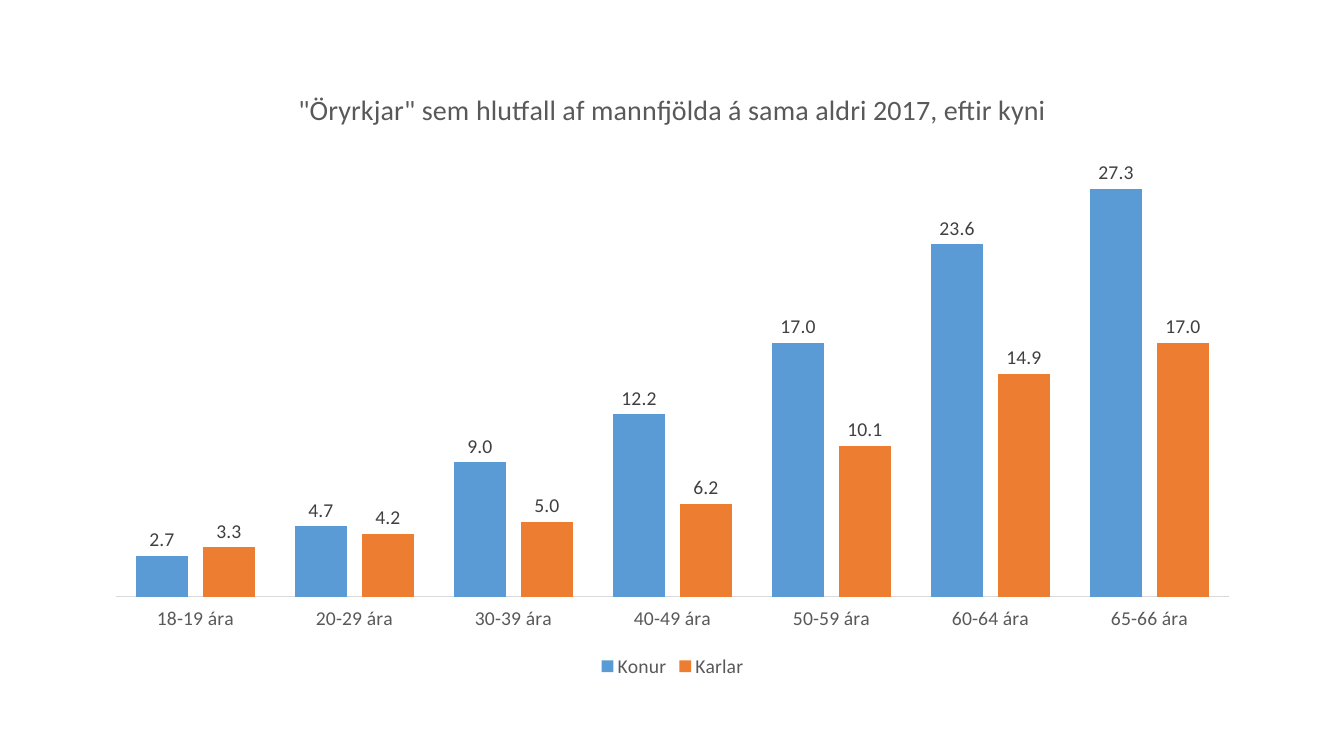
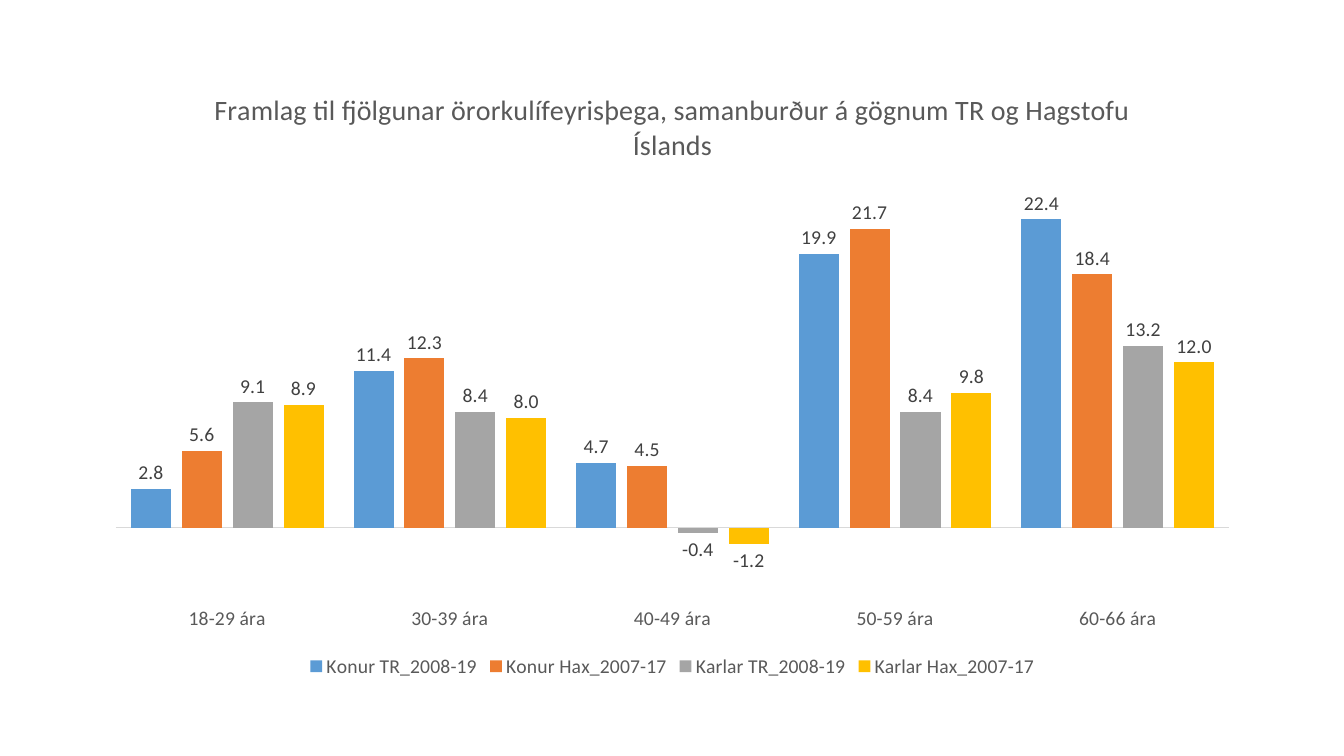
"""Build two slides, each with a clustered column chart on disability pensioners."""
from pptx import Presentation
from pptx.chart.data import CategoryChartData
from pptx.dml.color import RGBColor
from pptx.enum.chart import XL_CHART_TYPE, XL_LABEL_POSITION, XL_LEGEND_POSITION, XL_TICK_LABEL_POSITION, XL_TICK_MARK
from pptx.util import Inches, Pt

CLUSTERED = XL_CHART_TYPE.COLUMN_CLUSTERED
OUTSIDE_END = XL_LABEL_POSITION.OUTSIDE_END
BOTTOM = XL_LEGEND_POSITION.BOTTOM
LOW = XL_TICK_LABEL_POSITION.LOW
NO_TICK = XL_TICK_MARK.NONE

FONT = "Calibri"
NUMBER_FORMAT = "0.0"
COLORS = {"text": "595959", "label": "404040", "axis": "D9D9D9"}
SERIES_COLORS = ["5B9BD5", "ED7D31", "A5A5A5", "FFC000"]

CHARTS = [
    {
        "title": '"Öryrkjar" sem hlutfall af mannfjölda á sama aldri 2017, eftir kyni',
        "ages": ["18-19", "20-29", "30-39", "40-49", "50-59", "60-64", "65-66"],
        "series": {
            "Konur": [2.7, 4.7, 9.0, 12.2, 17.0, 23.6, 27.3],
            "Karlar": [3.3, 4.2, 5.0, 6.2, 10.1, 14.9, 17.0],
        },
    },
    {
        "title": "Framlag til fjölgunar örorkulífeyrisþega, samanburður á gögnum TR og Hagstofu Íslands",
        "ages": ["18-29", "30-39", "40-49", "50-59", "60-66"],
        "series": {
            "Konur TR_2008-19": [2.8, 11.4, 4.7, 19.9, 22.4],
            "Konur Hax_2007-17": [5.6, 12.3, 4.5, 21.7, 18.4],
            "Karlar TR_2008-19": [9.1, 8.4, -0.4, 8.4, 13.2],
            "Karlar Hax_2007-17": [8.9, 8.0, -1.2, 9.8, 12.0],
        },
    },
]


def style_font(font, size, color):
    font.name = FONT
    font.size = Pt(size)
    font.bold = False
    font.color.rgb = RGBColor.from_string(color)


prs = Presentation()
prs.slide_width = Inches(13.33)
prs.slide_height = Inches(7.5)
blank = prs.slide_layouts[6]

for content in CHARTS:
    s = prs.slides.add_slide(blank)
    data = CategoryChartData(number_format=NUMBER_FORMAT)
    data.categories = [f"{age} ára" for age in content["ages"]]
    for name, values in content["series"].items():
        data.add_series(name, values)
    chart = s.shapes.add_chart(
        CLUSTERED, Inches(0.92), Inches(0.67), Inches(11.5), Inches(6.1), data
    ).chart
    style_font(chart.font, 14, COLORS["text"])

    chart.has_title = True
    tf = chart.chart_title.text_frame
    tf.text = content["title"]
    style_font(tf.paragraphs[0].runs[0].font, 20, COLORS["text"])

    chart.has_legend = True
    chart.legend.position = BOTTOM
    chart.legend.include_in_layout = False
    style_font(chart.legend.font, 14, COLORS["text"])

    chart.value_axis.visible = False
    chart.value_axis.has_major_gridlines = False
    axis = chart.category_axis
    axis.major_tick_mark = NO_TICK
    axis.minor_tick_mark = NO_TICK
    axis.tick_label_position = LOW
    axis.format.line.width = Pt(0.75)
    axis.format.line.color.rgb = RGBColor.from_string(COLORS["axis"])
    style_font(axis.tick_labels.font, 14, COLORS["text"])

    plot = chart.plots[0]
    plot.gap_width = 75
    plot.overlap = -27
    plot.vary_by_categories = False
    for series, color in zip(plot.series, SERIES_COLORS):
        series.invert_if_negative = False
        series.format.fill.solid()
        series.format.fill.fore_color.rgb = RGBColor.from_string(color)
        labels = series.data_labels
        labels.show_value = True
        labels.number_format = NUMBER_FORMAT
        labels.number_format_is_linked = False
        labels.position = OUTSIDE_END
        style_font(labels.font, 14, COLORS["label"])

prs.save("out.pptx")
